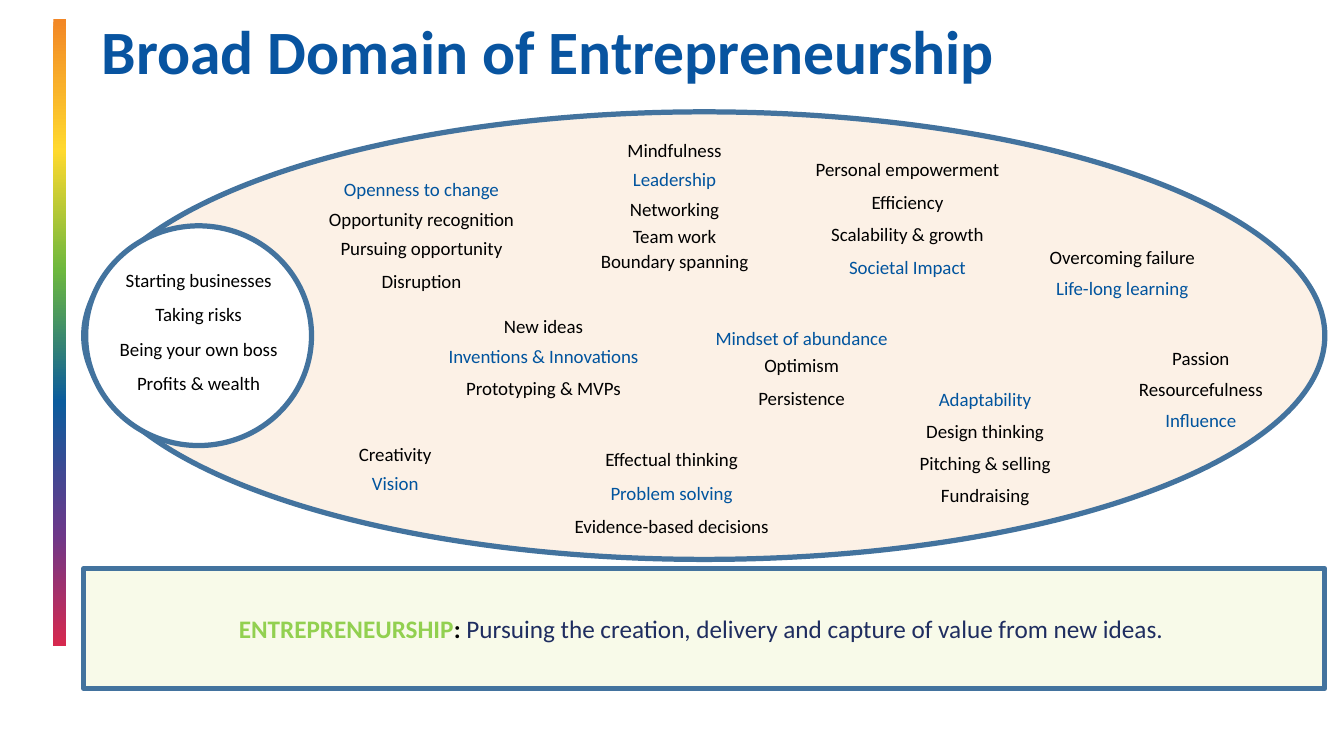
import pptx
import pptx.dml.color
import pptx.enum.shapes
import pptx.enum.text
import pptx.oxml
import pptx.oxml.ns
import pptx.util
from lxml import etree

Inches = pptx.util.Inches
Shapes = pptx.enum.shapes.MSO_SHAPE
Align = pptx.enum.text.PP_ALIGN
Anchor = pptx.enum.text.MSO_ANCHOR

BLACK, ACCENT, OUTLINE = "000000", "01549E", "43739E"
RAINBOW = [(0, "F28726"), (21, "FFD92E"), (40, "6DB83E"),
           (61, "0B5C9D"), (82, "6C388A"), (100, "D7294E")]
HIGHLIGHTS = {"Openness to change", "Leadership", "Societal Impact", "Life-long learning",
              "Inventions & Innovations", "Mindset of abundance", "Adaptability",
              "Influence", "Problem solving", "Vision"}
CLUSTERS = [
    (3.09, 3.23, [("Creativity", 0), ("Vision", 0.29)]),
    (11.08, 2.28, [("Passion", 0), ("Resourcefulness", 0.31), ("Influence", 0.61)]),
    (5.83, 3.28, [("Effectual thinking", 0), ("Problem solving", 0.34),
                  ("Evidence-based decisions", 0.67)]),
    (8.17, 0.4, [("Personal empowerment", 0), ("Efficiency", 0.33),
                 ("Scalability & growth", 0.65), ("Societal Impact", 0.98)]),
    (4.56, 1.96, [("New ideas", 0), ("Inventions & Innovations", 0.3),
                  ("Prototyping & MVPs", 0.62)]),
    (8.94, 2.69, [("Adaptability", 0), ("Design thinking", 0.31),
                  ("Pitching & selling", 0.63), ("Fundraising", 0.95)]),
    (10.3, 1.28, [("Overcoming failure", 0), ("Life-long learning", 0.31)]),
    (7.12, 2.08, [("Mindset of abundance", 0), ("Optimism", 0.27), ("Persistence", 0.6)]),
    (3.35, 0.6, [("Openness to change", 0), ("Opportunity recognition", 0.3),
                 ("Pursuing opportunity", 0.59), ("Disruption", 0.92)]),
    (5.86, 0.22, [("Mindfulness", 0), ("Leadership", 0.28), ("Networking", 0.58),
                  ("Team work", 0.85), ("Boundary spanning", 1.1)]),
]


def color(value):
    return pptx.dml.color.RGBColor.from_string(value)


def add_span(para, text, size, value, bold=False):
    span = para.add_run()
    span.text = text
    span.font.name = "Calibri"
    span.font.size = pptx.util.Pt(size)
    span.font.bold = bold
    span.font.color.rgb = color(value)


def add_panel(page, kind, box, fill, opacity=100):
    panel = page.shapes.add_shape(kind, *map(Inches, box))
    panel.shadow.inherit = False
    panel.fill.solid()
    panel.fill.fore_color.rgb = color(fill)
    panel.line.color.rgb = color(OUTLINE)
    panel.line.width = pptx.util.Pt(3.75)
    if opacity < 100:
        shade = panel.fill._xPr.find(".//" + pptx.oxml.ns.qn("a:srgbClr"))
        etree.SubElement(shade, pptx.oxml.ns.qn("a:alpha"), val=str(opacity * 1000))
    return panel


def add_rainbow_bar(page, box):
    bar = page.shapes.add_shape(Shapes.RECTANGLE, *map(Inches, box))
    bar.shadow.inherit = False
    bar.line.fill.background()
    bar.fill.gradient()
    bar.fill.gradient_angle = 270
    stops = bar.fill._xPr.find(".//" + pptx.oxml.ns.qn("a:gsLst"))
    for stop in list(stops):
        stops.remove(stop)
    for position, value in RAINBOW:
        stop = etree.SubElement(stops, pptx.oxml.ns.qn("a:gs"), pos=str(position * 1000))
        etree.SubElement(stop, pptx.oxml.ns.qn("a:srgbClr"), val=value)


def add_title(page, box):
    title = page.shapes.title
    title.left, title.top, title.width, title.height = map(Inches, box)
    frame = title.text_frame
    frame.vertical_anchor = Anchor.MIDDLE
    para = frame.paragraphs[0]
    para.alignment = Align.LEFT
    para.line_spacing = 0.9
    add_span(para, "Broad Domain of Entrepreneurship", 44, "0854A0", True)


def add_phrase(page, text, center, top):
    width = 0.25 + 0.1 * len(text)
    label = page.shapes.add_textbox(Inches(center - width / 2), Inches(top),
                                    Inches(width), Inches(0.33))
    frame = label.text_frame
    frame.word_wrap = True
    para = frame.paragraphs[0]
    para.alignment = Align.CENTER
    add_span(para, text, 13.5, ACCENT if text in HIGHLIGHTS else BLACK)


def add_domain(page, box):
    left, top = box[:2]
    add_panel(page, Shapes.OVAL, box, "EC8222", 11)
    for center, start, phrases in CLUSTERS:
        for text, drop in phrases:
            add_phrase(page, text, left + center, top + start + drop)


def add_core(page, box):
    left, top, width, height = box
    add_panel(page, Shapes.OVAL, box, "FFFFFF")
    label = page.shapes.add_textbox(Inches(left + 0.17), Inches(top + 0.4),
                                    Inches(width - 0.34), Inches(height - 0.75))
    frame = label.text_frame
    frame.word_wrap = True
    lines = ["Starting businesses", "Taking risks", "Being your own boss", "Profits & wealth"]
    for index, text in enumerate(lines):
        para = frame.add_paragraph() if index else frame.paragraphs[0]
        para.alignment = Align.CENTER
        para.line_spacing = 0.9
        para.space_before = pptx.util.Pt(10 if index else 0)
        add_span(para, text, 13.5, BLACK)


def add_definition(page, box):
    frame = add_panel(page, Shapes.RECTANGLE, box, "BBD531", 10).text_frame
    frame.word_wrap = True
    frame.vertical_anchor = Anchor.MIDDLE
    frame.margin_top = Inches(0.09)
    frame.margin_right = Inches(0.16)
    para = frame.paragraphs[0]
    para.alignment = Align.CENTER
    para.line_spacing = 0.9
    add_span(para, "ENTREPRENEURSHIP", 18, "92D050", True)
    add_span(para, ": ", 18, BLACK, True)
    add_span(para, "Pursuing the creation, delivery and capture of value from new ideas.",
             18, "1F2D60")


def main():
    deck = pptx.Presentation()
    deck.slide_width, deck.slide_height = Inches(13.33), Inches(7.5)
    page = deck.slides.add_slide(deck.slide_layouts[5])
    add_rainbow_bar(page, (0.53, 0.19, 0.13, 6.22))
    add_title(page, (0.91, -0.01, 11.5, 1.11))
    add_domain(page, (0.83, 1.11, 12.31, 4.44))
    add_core(page, (0.85, 2.24, 2.24, 2.18))
    add_definition(page, (0.83, 5.64, 12.31, 1.19))
    deck.save("out.pptx")


if __name__ == "__main__":
    main()
